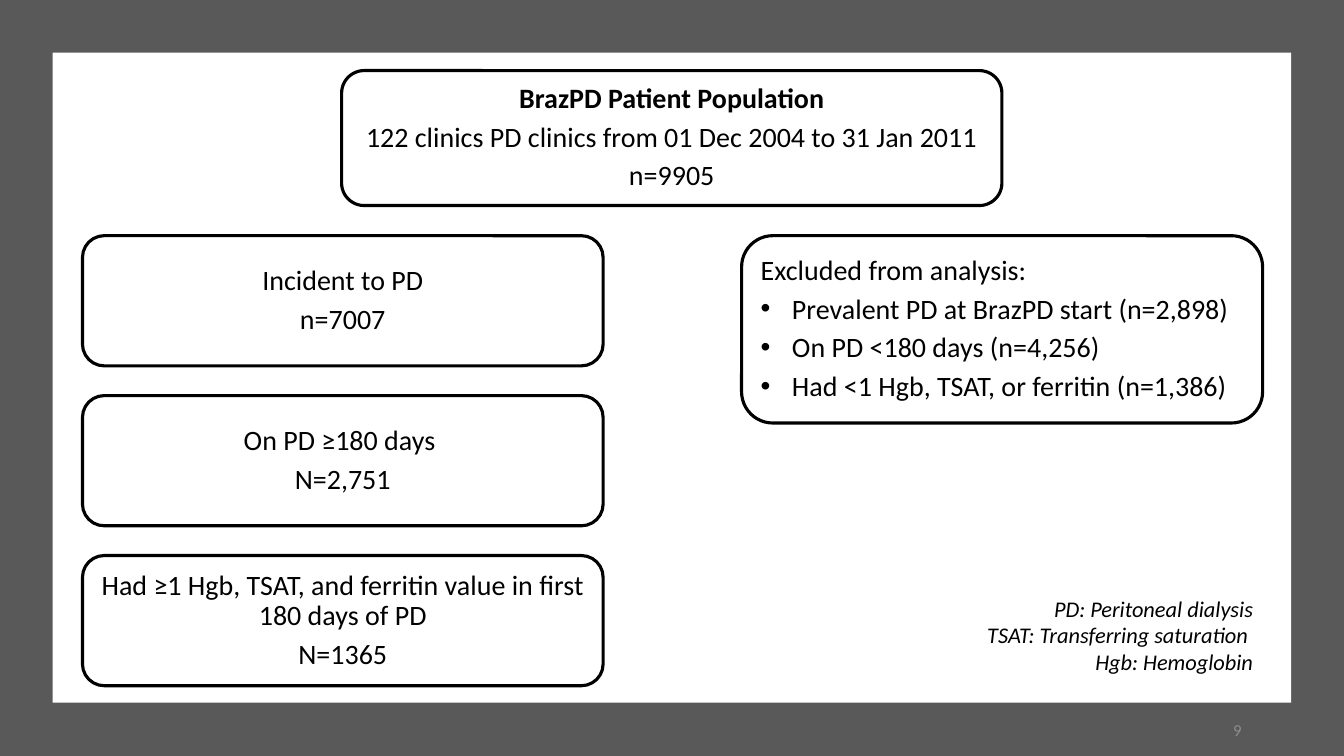
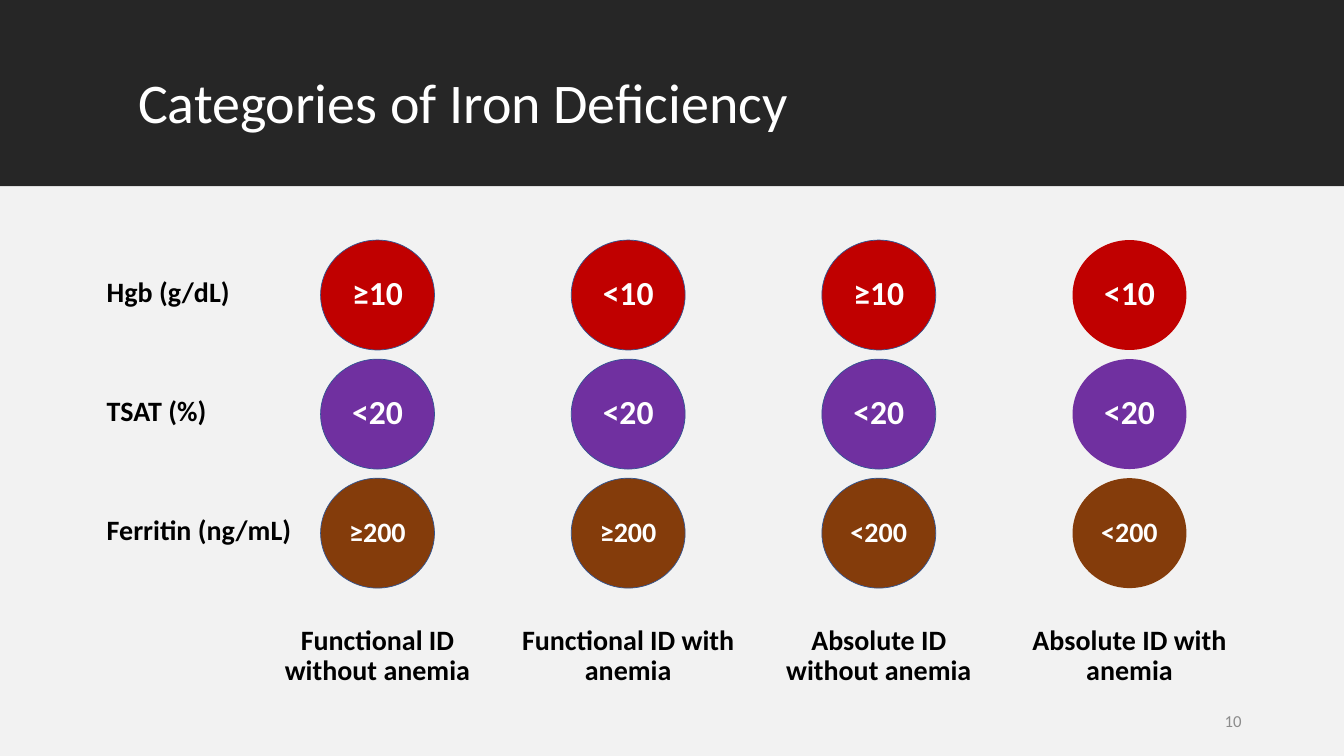
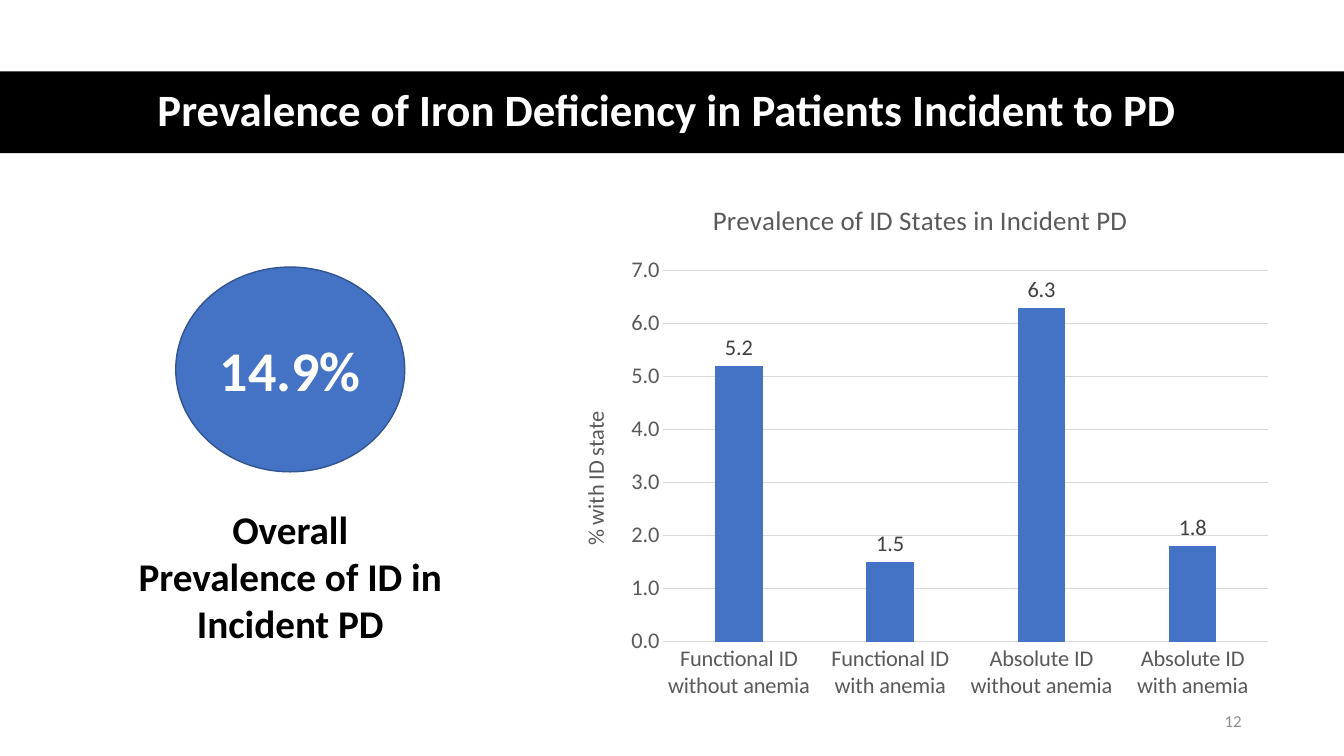
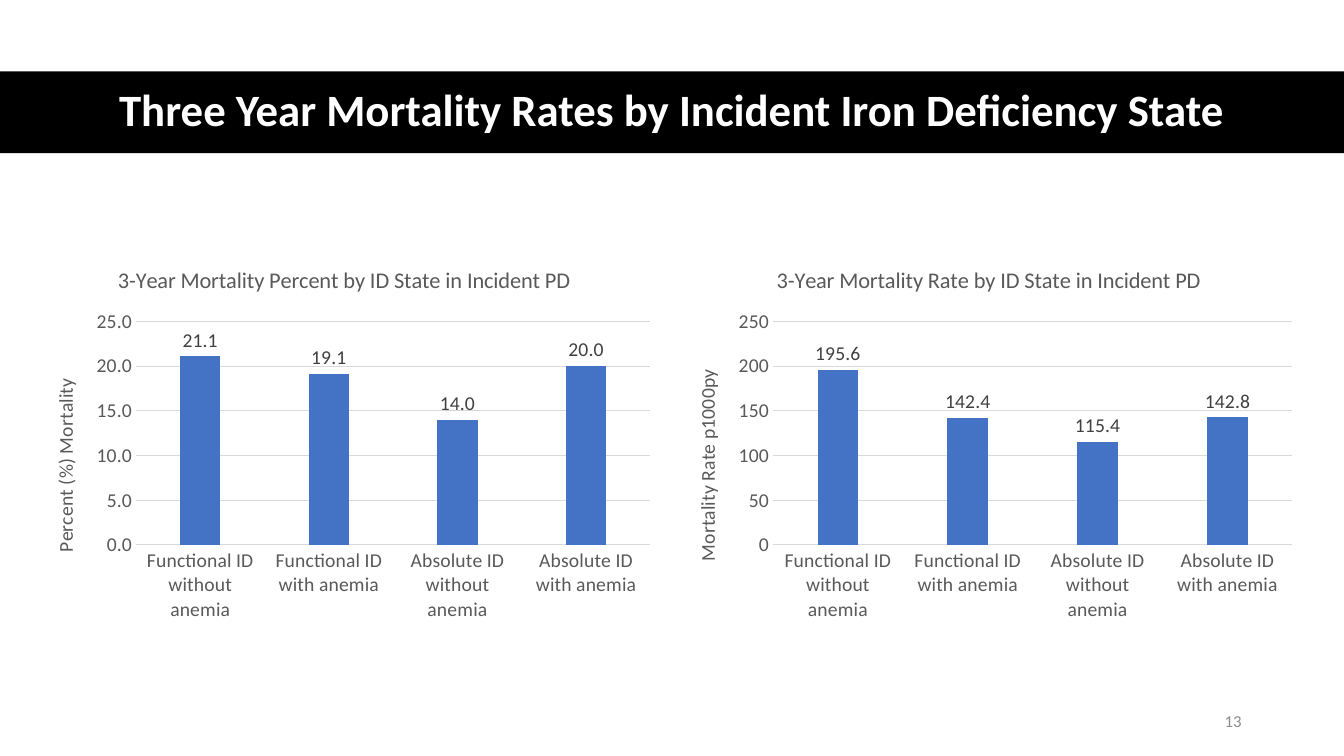
from dataclasses import dataclass

from lxml import etree
from pptx import Presentation
from pptx import util as u
from pptx.chart.data import CategoryChartData
from pptx.dml.color import RGBColor
from pptx.enum import chart as ch, shapes, text
from pptx.oxml.ns import qn

Cm, Pt = u.Cm, u.Pt
ALIGN, ANCHOR = text.PP_ALIGN, text.MSO_ANCHOR
SHAPE = shapes.MSO_SHAPE


@dataclass(frozen=True)
class Theme:
    font: str = "Calibri"
    black: str = "000000"
    white: str = "FFFFFF"
    frame: str = "595959"
    header: str = "262626"
    body: str = "F2F2F2"
    blue: str = "4472C4"
    blue_edge: str = "325491"
    red: str = "C00000"
    purple: str = "7030A0"
    brown: str = "843C0B"
    number: str = "8C8C8C"
    axis: str = "595959"
    grid: str = "D9D9D9"
    value: str = "404040"
    size_title: float = 40
    size_band: float = 32
    size_caption: float = 28
    size_large: float = 24
    size_text: float = 20
    size_note: float = 16
    size_number: float = 12


T = Theme()
WIDTH, HEIGHT = 33.87, 19.05
STATES = ["Functional ID without anemia", "Functional ID with anemia",
          "Absolute ID without anemia", "Absolute ID with anemia"]


def rgb(value):
    return RGBColor.from_string(value)


def set_font(font, size, color, bold=False, italic=False):
    font.name, font.size, font.color.rgb = T.font, Pt(size), rgb(color)
    font.bold, font.italic = bold, italic


def add_bullet(p, indent=0.79):
    pPr = p._p.get_or_add_pPr()
    pPr.set("marL", str(Cm(indent)))
    pPr.set("indent", str(-Cm(indent)))
    etree.SubElement(pPr, qn("a:buFont")).set("typeface", "Arial")
    etree.SubElement(pPr, qn("a:buChar")).set("char", "•")


def write(sp, lines, size=T.size_text, color=T.black, bold=False, italic=False,
          align=ALIGN.CENTER, anchor=ANCHOR.MIDDLE, spacing=None, after=0,
          bold_first=False, bullets=False):
    """Fill a shape with one paragraph per line; bullets start at the second."""
    tf = sp.text_frame
    tf.word_wrap, tf.vertical_anchor = True, anchor
    for i, line in enumerate(lines):
        p = tf.add_paragraph() if i else tf.paragraphs[0]
        p.alignment, p.line_spacing, p.space_after = align, spacing, Pt(after)
        if bullets and i:
            add_bullet(p)
        r = p.add_run()
        r.text = line
        set_font(r.font, size, color, bold or (bold_first and i == 0), italic)


def add_shape(s, kind, box, fill=None, line=None, weight=1):
    sp = s.shapes.add_shape(kind, *map(Cm, box))
    sp.shadow.inherit = False
    if fill:
        sp.fill.solid()
        sp.fill.fore_color.rgb = rgb(fill)
    else:
        sp.fill.background()
    if line:
        sp.line.color.rgb, sp.line.width = rgb(line), Pt(weight)
    else:
        sp.line.fill.background()
    return sp


def add_text(s, box, lines, **style):
    write(s.shapes.add_textbox(*map(Cm, box)), lines, **style)


def new_slide(prs):
    return prs.slides.add_slide(prs.slide_layouts[6])


def page_number(s, number, top=17.65):
    add_text(s, (23.92, top, 7.62, 1.01), [str(number)], size=T.size_number,
             color=T.number, align=ALIGN.RIGHT)


def title_band(s, title):
    band = add_shape(s, SHAPE.RECTANGLE, (0, 1.8, WIDTH, 2.06), T.black)
    write(band, [title], size=T.size_band, color=T.white, bold=True, spacing=0.9)


def flow_box(s, box, lines, **style):
    sp = add_shape(s, SHAPE.ROUNDED_RECTANGLE, box, line=T.black, weight=2.25)
    write(sp, lines, spacing=0.9, after=6, **style)


def flow_column(s, box, steps, gap=0.75):
    """Stack equal boxes from top to bottom."""
    left, top, width, height = box
    step_height = (height - gap * (len(steps) - 1)) / len(steps)
    for i, lines in enumerate(steps):
        flow_box(s, (left, top + i * (step_height + gap), width, step_height), lines)


def criteria_grid(s, box, rows, columns):
    """Draw a labelled circle for each row and column, with captions below."""
    left, top, width, height = box
    circle_w, circle_h, label_w, caption_w, caption_h = 2.87, 2.77, 5.7, 5.92, 2.16
    first = left + 5.64
    step_x = (width - 5.64 - circle_w) / (len(columns) - 1)
    step_y = (height - circle_h) / (len(rows) - 1)
    for i, (label, fill, size, values) in enumerate(rows):
        y = top + i * step_y
        add_text(s, (left, y + 0.83, label_w, 1.19), [label], bold=True,
                 align=ALIGN.LEFT, anchor=ANCHOR.TOP, spacing=0.9, after=6)
        for j, value in enumerate(values):
            edge = T.blue_edge if j < len(values) - 1 else None
            sp = add_shape(s, SHAPE.OVAL, (first + j * step_x, y, circle_w, circle_h),
                           fill, edge, 0.5)
            write(sp, [value], size=size, color=T.white, bold=True, spacing=0.9, after=6)
    for j, caption in enumerate(columns):
        x = first + j * step_x + (circle_w - caption_w) / 2
        add_text(s, (x, top + height + 0.83, caption_w, caption_h), [caption], bold=True,
                 anchor=ANCHOR.TOP, spacing=0.9, after=6)


def chart_title(owner, title, size):
    owner.has_title = True
    owner_title = owner.chart_title if hasattr(owner, "chart_title") else owner.axis_title
    p = owner_title.text_frame.paragraphs[0]
    r = p.add_run()
    r.text = title
    set_font(r.font, size, T.axis)


def column_chart(s, box, title, axis_title, values, top_value, step,
                 size, title_size, axis_format="0.0"):
    data = CategoryChartData()
    data.categories = STATES
    data.add_series("Series 1", values)
    chart = s.shapes.add_chart(ch.XL_CHART_TYPE.COLUMN_CLUSTERED,
                               *map(Cm, box), data).chart
    set_font(chart.font, size, T.black)
    chart.has_legend = False
    chart_title(chart, title, title_size)
    chart.chart_title.include_in_layout = False

    cats, vals = chart.category_axis, chart.value_axis
    for axis in (cats, vals):
        axis.major_tick_mark = axis.minor_tick_mark = ch.XL_TICK_MARK.NONE
        set_font(axis.tick_labels.font, size, T.axis)
    grid = vals.major_gridlines.format.line
    for line in (cats.format.line, grid):
        line.color.rgb, line.width = rgb(T.grid), Pt(0.75)
    vals.format.line.fill.background()
    chart_title(vals, axis_title, size)
    vals.minimum_scale, vals.maximum_scale, vals.major_unit = 0, top_value, step
    vals.tick_labels.number_format = axis_format
    vals.tick_labels.number_format_is_linked = False

    plot = chart.plots[0]
    plot.gap_width, plot.overlap, plot.vary_by_categories = 219, -27, False
    fill = plot.series[0].format.fill
    fill.solid()
    fill.fore_color.rgb = rgb(T.blue)
    plot.has_data_labels = True
    labels = plot.data_labels
    labels.show_value, labels.position = True, ch.XL_LABEL_POSITION.OUTSIDE_END
    labels.number_format, labels.number_format_is_linked = "0.0", False
    set_font(labels.font, size, T.value)


def key_figure(s, box, figure, caption):
    left, top, width, height = box
    oval_w, oval_h, caption_h = 5.77, 5.16, 3.84
    sp = add_shape(s, SHAPE.OVAL, (left + (width - oval_w) / 2, top, oval_w, oval_h),
                   T.blue, T.blue_edge)
    write(sp, [figure], size=T.size_title, color=T.white, bold=True)
    add_text(s, (left, top + height - caption_h, width, caption_h), caption,
             size=T.size_caption, bold=True, anchor=ANCHOR.TOP)


def population_slide(prs):
    s = new_slide(prs)
    add_shape(s, SHAPE.RECTANGLE, (0, 0, WIDTH, HEIGHT), T.frame)
    add_shape(s, SHAPE.RECTANGLE, (1.33, 1.33, 31.21, 16.38), T.white)
    flow_box(s, (8.61, 1.78, 16.64, 3.4),
             ["BrazPD Patient Population",
              "122 clinics PD clinics from 01 Dec 2004 to 31 Jan 2011",
              "n=9905"], bold_first=True)
    flow_column(s, (2.08, 5.94, 13.12, 11.34), [
        ["Incident to PD", "n=7007"],
        ["On PD ≥180 days ", "N=2,751"],
        ["Had ≥1 Hgb, TSAT, and ferritin value in first 180 days of PD", "N=1365"]])
    flow_box(s, (18.69, 5.94, 13.13, 4.72),
             ["Excluded from analysis:",
              "Prevalent PD at BrazPD start (n=2,898)",
              "On PD <180 days (n=4,256)",
              "Had <1 Hgb, TSAT, or ferritin (n=1,386)"],
             align=ALIGN.LEFT, bullets=True)
    add_text(s, (23.42, 14.86, 8.41, 2.39),
             ["PD: Peritoneal dialysis", "TSAT: Transferring saturation ",
              "Hgb: Hemoglobin"],
             size=T.size_note, italic=True, align=ALIGN.RIGHT, anchor=ANCHOR.TOP)
    page_number(s, 9, top=17.88)


def categories_slide(prs):
    s = new_slide(prs)
    header_h = 4.7
    add_shape(s, SHAPE.RECTANGLE, (0, 0, WIDTH, header_h), T.header)
    add_text(s, (3.23, 1.78, 27.46, 2.49), ["Categories of Iron Deficiency"],
             size=T.size_title, color=T.white, align=ALIGN.LEFT,
             anchor=ANCHOR.TOP, spacing=0.9)
    add_shape(s, SHAPE.RECTANGLE, (0, header_h, WIDTH, HEIGHT - header_h), T.body)
    criteria_grid(s, (2.44, 6.05, 27.46, 8.77), [
        ("Hgb (g/dL)", T.red, T.size_large, ["≥10", "<10", "≥10", "<10"]),
        ("TSAT (%)", T.purple, T.size_large, ["<20"] * 4),
        ("Ferritin (ng/mL)", T.brown, T.size_text, ["≥200", "≥200", "<200", "<200"])],
        STATES)
    page_number(s, 10)


def prevalence_slide(prs):
    s = new_slide(prs)
    title_band(s, "Prevalence of Iron Deficiency in Patients Incident to PD ")
    column_chart(s, (14.07, 4.55, 18.26, 13.36), "Prevalence of ID States in Incident PD",
                 "% with ID state", [5.2, 1.5, 6.3, 1.8], 7, 1, size=16, title_size=19.2)
    key_figure(s, (1.55, 6.73, 11.53, 9.71), "14.9%",
               ["Overall", "Prevalence of ID in Incident PD"])
    page_number(s, 12)


def mortality_slide(prs):
    s = new_slide(prs)
    title_band(s, "Three Year Mortality Rates by Incident Iron Deficiency State")
    charts = [
        ("3-Year Mortality Percent by ID State in Incident PD ", "Percent (%) Mortality",
         [21.1, 19.1, 14, 20], 25, 5, "0.0"),
        ("3-Year Mortality Rate by ID State in Incident PD", "Mortality Rate p1000py",
         [195.6, 142.4, 115.4, 142.8], 250, 50, "0")]
    for i, (title, axis_title, values, top_value, step, axis_format) in enumerate(charts):
        column_chart(s, (0.76 + i * 16.18, 6.25, 15.95, 9.6), title, axis_title, values,
                     top_value, step, size=14, title_size=16, axis_format=axis_format)
    page_number(s, 13)


def main():
    prs = Presentation()
    prs.slide_width, prs.slide_height = Cm(WIDTH), Cm(HEIGHT)
    for build in (population_slide, categories_slide, prevalence_slide, mortality_slide):
        build(prs)
    prs.save("out.pptx")


if __name__ == "__main__":
    main()
